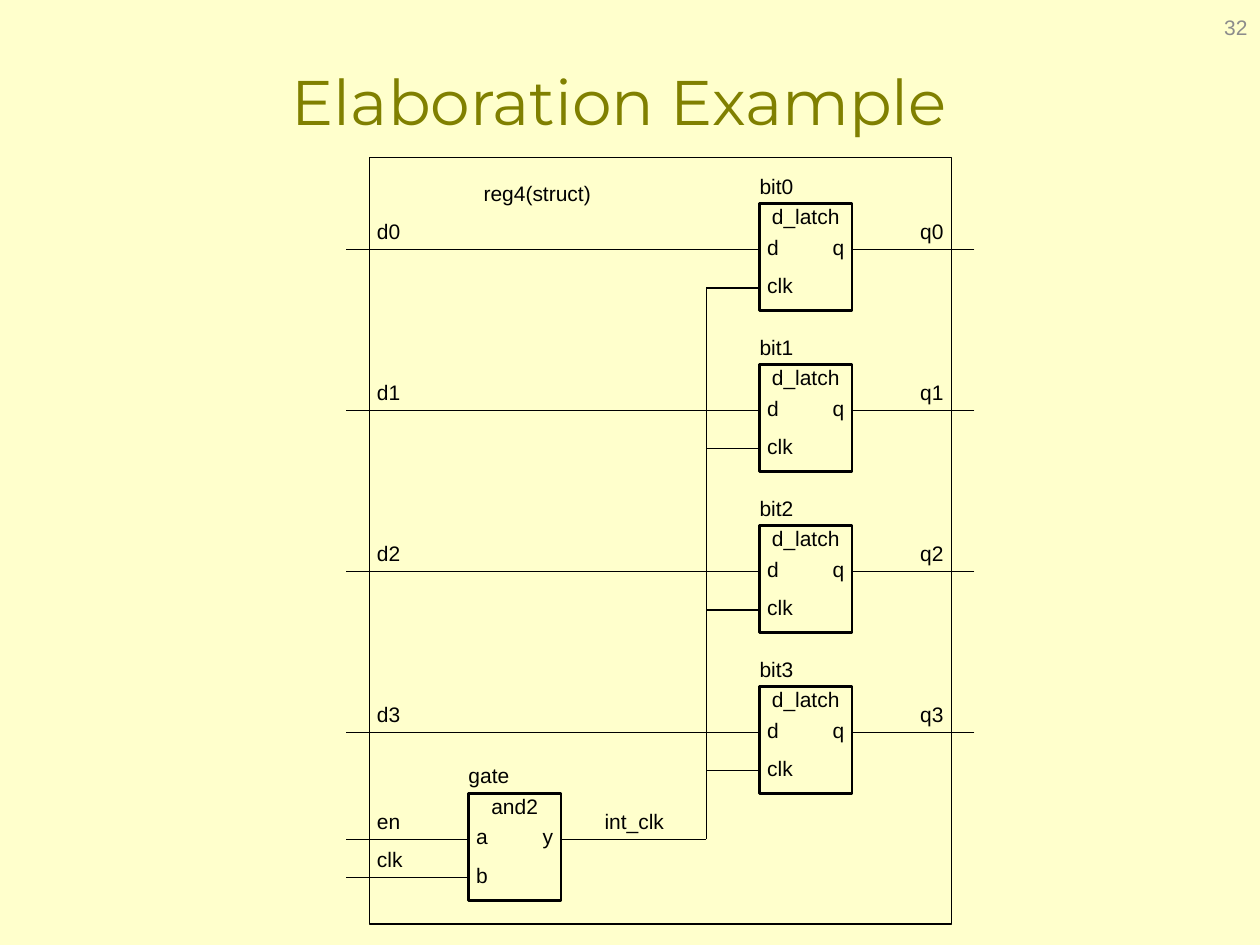
from lxml import etree
from pptx import Presentation
from pptx.dml.color import RGBColor
from pptx.enum.shapes import MSO_CONNECTOR, MSO_SHAPE
from pptx.enum.text import MSO_ANCHOR, PP_ALIGN
from pptx.oxml.ns import qn
from pptx.util import Pt

LEFT, CENTER, RIGHT = PP_ALIGN.LEFT, PP_ALIGN.CENTER, PP_ALIGN.RIGHT
MIDDLE = MSO_ANCHOR.MIDDLE
RECT = MSO_SHAPE.RECTANGLE
STRAIGHT = MSO_CONNECTOR.STRAIGHT
TITLE_ONLY = 5

BLACK, OLIVE, GREY, CREAM = "000000", "808000", "8C8C8C", "FFFFCC"

# Component geometry, in points
BLOCK_W, BLOCK_H = 52.8, 61.2
PORT_1, PORT_2 = 26.2, 48.1    # port heights below the top of a block
STUB = 13.2
LABEL_H = 17.5
LABEL_W = 26.4
PORT_W = 17.5
PAD = 4.4


def color(hex_string):
    return RGBColor.from_string(hex_string)


def add_run(p, text, size, font, hex_color):
    r = p.add_run()
    r.text = text
    r.font.size = Pt(size)
    r.font.name = font
    r.font.color.rgb = color(hex_color)


def add_label(shapes, text, x, y, w, align=LEFT, h=LABEL_H):
    tf = shapes.add_textbox(Pt(x), Pt(y), Pt(w), Pt(h)).text_frame
    tf.word_wrap = True
    tf.margin_left = tf.margin_right = tf.margin_top = tf.margin_bottom = 0
    p = tf.paragraphs[0]
    p.alignment = align
    add_run(p, text, 12, "Arial", BLACK)


def add_wire(shapes, x1, y1, x2, y2):
    wire = shapes.add_connector(STRAIGHT, Pt(x1), Pt(y1), Pt(x2), Pt(y2))
    wire.line.color.rgb = color(BLACK)
    wire.line.width = Pt(0.75)
    etree.SubElement(wire._element.spPr, qn("a:effectLst"))


def add_frame(shapes, x, y, w, h, width):
    sp = shapes.add_shape(RECT, Pt(x), Pt(y), Pt(w), Pt(h))
    sp.shadow.inherit = False
    sp.fill.background()
    sp.line.color.rgb = color(BLACK)
    sp.line.width = Pt(width)


def add_block(shapes, x, y, name, entity, inputs, output):
    """A component with two inputs and one output, each with a wire stub."""
    right = x + BLOCK_W
    add_label(shapes, name, x, y - LABEL_H, LABEL_W)
    add_label(shapes, entity, x, y, BLOCK_W, CENTER)
    for port, dy in zip(inputs, (PORT_1, PORT_2)):
        add_label(shapes, port, x + PAD, y + dy - LABEL_H / 2, PORT_W)
        add_wire(shapes, x, y + dy, x - STUB, y + dy)
    add_label(shapes, output, right - PAD - PORT_W,
              y + PORT_1 - LABEL_H / 2, PORT_W, RIGHT)
    add_wire(shapes, right + STUB, y + PORT_1, right, y + PORT_1)
    add_frame(shapes, x, y, BLOCK_W, BLOCK_H, 1.5)


def add_title(slide, x, y, w, h):
    title = slide.shapes.title
    title.left, title.top, title.width, title.height = Pt(x), Pt(y), Pt(w), Pt(h)
    tf = title.text_frame
    tf.vertical_anchor = MIDDLE
    p = tf.paragraphs[0]
    p.alignment = CENTER
    add_run(p, "Elaboration Example", 36, "Montserrat", OLIVE)


def add_page_number(slide, x, y, w, h):
    tf = slide.shapes.add_textbox(Pt(x), Pt(y), Pt(w), Pt(h)).text_frame
    tf.word_wrap = True
    tf.vertical_anchor = MIDDLE
    p = tf.paragraphs[0]
    p.alignment = RIGHT
    add_run(p, "32", 12, "Arial", GREY)


def add_circuit(slide, x, y, w, h):
    shapes = slide.shapes.add_group_shape().shapes
    right = x + w
    wire_left, wire_right = x - 13.2, right + 13.2
    latch_x, latch_y, pitch = x + 223, y + 26.4, 92
    gate_x, gate_y = x + 56.7, y + 363.4
    bus_x = x + 192.6
    label_x = x + PAD

    # Enclosing entity
    add_frame(shapes, x, y, w, h, 0.75)
    add_label(shapes, "reg4(struct)", x + 61, y + 13, 70, CENTER, h=13)

    # Four latches with their data and clock wires
    for i in range(4):
        top = latch_y + i * pitch
        data_y, clock_y = top + PORT_1, top + PORT_2
        add_block(shapes, latch_x, top, f"bit{i}", "d_latch", ("d", "clk"), "q")
        add_label(shapes, f"d{i}", label_x, data_y - LABEL_H, LABEL_W)
        add_label(shapes, f"q{i}", right - PAD - LABEL_W, data_y - LABEL_H,
                  LABEL_W, RIGHT)
        add_wire(shapes, latch_x - STUB, data_y, wire_left, data_y)
        add_wire(shapes, wire_right, data_y, latch_x + BLOCK_W + STUB, data_y)
        add_wire(shapes, latch_x - STUB, clock_y, bus_x, clock_y)

    # Clock gate and its inputs
    add_block(shapes, gate_x, gate_y, "gate", "and2", ("a", "b"), "y")
    for text, dy in (("en", PORT_1), ("clk", PORT_2)):
        add_label(shapes, text, label_x, gate_y + dy - LABEL_H, LABEL_W)
        add_wire(shapes, gate_x - STUB, gate_y + dy, wire_left, gate_y + dy)

    # Internal clock line
    out_y = gate_y + PORT_1
    add_label(shapes, "int_clk", x + 127.4, out_y - LABEL_H, 48.2, CENTER)
    add_wire(shapes, bus_x, out_y, gate_x + BLOCK_W + STUB, out_y)
    add_wire(shapes, bus_x, latch_y + PORT_2, bus_x, out_y)


def main():
    prs = Presentation()
    prs.slide_width, prs.slide_height = Pt(720), Pt(540)
    s = prs.slides.add_slide(prs.slide_layouts[TITLE_ONLY])
    s.background.fill.solid()
    s.background.fill.fore_color.rgb = color(CREAM)
    add_title(s, 41.8, 12.2, 624.2, 90)
    add_circuit(s, 211, 90, 332.6, 438)
    add_page_number(s, 552.2, 1.4, 167.8, 28.8)
    prs.save("out.pptx")


if __name__ == "__main__":
    main()
